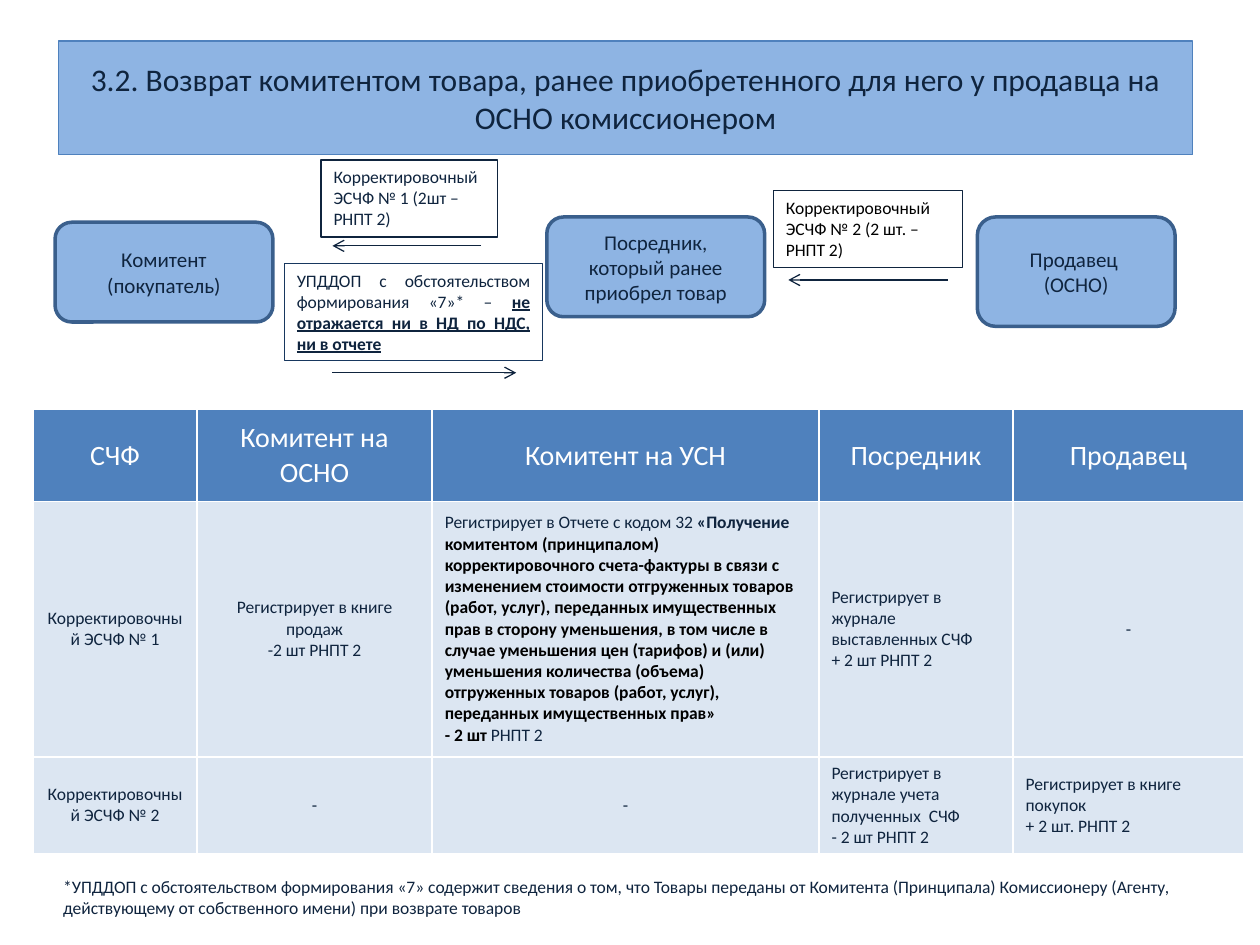
from pptx import Presentation
from pptx.dml.color import RGBColor
from pptx.enum.shapes import MSO_CONNECTOR as Link, MSO_SHAPE as Kind
from pptx.enum.text import MSO_ANCHOR as Anchor, MSO_AUTO_SIZE as Fit, PP_ALIGN as Align
from pptx.oxml.ns import qn
from pptx.util import Pt
from lxml.etree import SubElement

HUES = {
    "ink": "0F243E", "black": "000000", "white": "FFFFFF", "sky": "8EB4E3",
    "blue": "4F81BD", "edge": "3A5F8C", "navy": "17375E", "pale": "DCE6F2",
}
FONT = "Calibri"


def hue(name):
    return RGBColor.from_string(HUES[name])


def write(frame, paras, size, ink="ink", align=Align.LEFT):
    frame.word_wrap = True
    for i, parts in enumerate(paras):
        para = frame.add_paragraph() if i else frame.paragraphs[0]
        para.alignment = align
        for part in [parts] if isinstance(parts, str) else parts:
            text, marks, tone = (part, "", ink) if isinstance(part, str) else part
            run = para.add_run()
            run.text = text
            font = run.font
            font.name, font.size = FONT, Pt(size)
            font.bold, font.underline = "b" in marks, "u" in marks
            font.color.rgb = hue(tone)


def paint(shape, fill, line, width):
    if fill:
        shape.fill.solid()
        shape.fill.fore_color.rgb = hue(fill)
    else:
        shape.fill.background()
    shape.line.color.rgb = hue(line)
    shape.line.width = Pt(width)


def place(shape, box):
    shape.left, shape.top, shape.width, shape.height = map(Pt, box)


def add_title(slide, box, text):
    title = slide.shapes.title
    place(title, box)
    paint(title, "sky", "blue", 0.75)
    title.text_frame.vertical_anchor = Anchor.MIDDLE
    write(title.text_frame, [text], 18, align=Align.CENTER)


def add_party(slide, box, paras):
    shape = slide.shapes.add_shape(Kind.ROUNDED_RECTANGLE, *map(Pt, box))
    shape.shadow.inherit = False
    paint(shape, "sky", "edge", 2)
    shape.text_frame.vertical_anchor = Anchor.MIDDLE
    write(shape.text_frame, paras, 12, align=Align.CENTER)


def add_note(slide, box, parts, line=None, ink="ink", align=Align.LEFT):
    note = slide.shapes.add_textbox(*map(Pt, box))
    if line:
        paint(note, None, line, 0.75)
    write(note.text_frame, [parts], 10, ink, align)
    note.text_frame.auto_size = Fit.SHAPE_TO_FIT_TEXT


def add_arrow(slide, start, end, y):
    arrow = slide.shapes.add_connector(Link.STRAIGHT, Pt(start), Pt(y), Pt(end), Pt(y))
    arrow.line.color.rgb = hue("ink")
    arrow.line.width = Pt(0.75)
    props = arrow._element.spPr
    SubElement(props.get_or_add_ln(), qn("a:tailEnd"), type="arrow")
    SubElement(props, qn("a:effectLst"))


def add_flow(slide, x, y):
    parties = [
        ((0, 35.5, 124.5, 57), ["Комитент (покупатель)"]),
        ((281, 32.5, 124.5, 57), ["Посредник, который ранее приобрел товар"]),
        ((527, 32.5, 113, 62.5), ["Продавец ", "(ОСНО)"]),
    ]
    for (left, top, wide, high), paras in parties:
        add_party(slide, (x + left, y + top, wide, high), paras)

    notes = [
        ((152, 0, 101, 44), "Корректировочный ЭСЧФ № 1 (2шт – РНПТ 2)",
         "ink", "ink", Align.LEFT),
        ((410.5, 17.5, 108, 44), "Корректировочный ЭСЧФ № 2 (2 шт. –РНПТ 2)",
         "ink", "black", Align.LEFT),
        ((131, 59, 147.5, 55.5),
         ["УПДДОП с обстоятельством формирования «7»* – ",
          ("не отражается ни в НД по НДС, ни в отчете", "bu", "ink")],
         "navy", "ink", Align.JUSTIFY),
    ]
    for (left, top, wide, high), parts, line, ink, align in notes:
        add_note(slide, (x + left, y + top, wide, high), parts, line, ink, align)

    for start, end, drop in [(243.5, 158.5, 49), (510, 419, 68.5), (158.5, 263.5, 121.5)]:
        add_arrow(slide, x + start, x + end, y + drop)


def add_grid(slide, box, widths, heights, rows):
    grid = slide.shapes.add_table(len(rows), len(widths), *map(Pt, box)).table
    grid.horz_banding = False
    for col, wide in zip(grid.columns, widths):
        col.width = Pt(wide)
    for row, high in zip(grid.rows, heights):
        row.height = Pt(high)
    for r, row in enumerate(rows):
        size, ink, fill = (10, "ink", "pale") if r else (16, "white", "blue")
        for c, (align, *paras) in enumerate(row):
            cell = grid.cell(r, c)
            cell.fill.solid()
            cell.fill.fore_color.rgb = hue(fill)
            cell.vertical_anchor = Anchor.MIDDLE
            write(cell.text_frame, paras, size, ink, align)


def main():
    deck = Presentation()
    deck.slide_width, deck.slide_height = Pt(720), Pt(540)
    slide = deck.slides.add_slide(deck.slide_layouts[5])
    add_title(slide, (33.5, 23.5, 648, 65),
              "3.2. Возврат комитентом товара, ранее приобретенного для него "
              "у продавца на ОСНО комиссионером")
    add_flow(slide, 31.5, 91.5)

    mid, left = Align.CENTER, Align.LEFT
    heads = ["СЧФ", "Комитент на ОСНО", "Комитент на УСН", "Посредник", "Продавец"]
    code = [
        "Регистрирует в Отчете с кодом 32 ",
        ("«Получение ", "b", "ink"),
        ("комитентом (принципалом) корректировочного счета-фактуры в связи с "
         "изменением стоимости отгруженных товаров (работ, услуг), переданных "
         "имущественных прав в сторону уменьшения, в том числе в случае "
         "уменьшения цен (тарифов) и (или) уменьшения количества (объема) "
         "отгруженных товаров (работ, услуг), переданных имущественных прав»",
         "b", "black"),
    ]
    rows = [
        [(mid, head) for head in heads],
        [(mid, "Корректировочный ЭСЧФ № 1"),
         (mid, "Регистрирует в книге продаж", "-2 шт РНПТ 2"),
         (left, code, [("- 2 шт ", "b", "black"), "РНПТ 2"]),
         (left, "Регистрирует в журнале выставленных СЧФ", "+ 2 шт РНПТ 2"),
         (mid, "-")],
        [(mid, "Корректировочный ЭСЧФ № 2"),
         (mid, "-"),
         (mid, "-"),
         (left, "Регистрирует в журнале учета полученных  СЧФ", "- 2 шт РНПТ 2"),
         (left, "Регистрирует в книге покупок", "+ 2 шт. РНПТ 2")],
    ]
    add_grid(slide, (19, 234, 692, 254), [93.5, 134.5, 221, 111, 132],
             [52.5, 146, 55.5], rows)
    add_note(slide, (29, 497, 671, 31.5),
             "*УПДДОП с обстоятельством формирования «7» содержит сведения о том, "
             "что Товары переданы от Комитента (Принципала) Комиссионеру (Агенту, "
             "действующему от собственного имени) при возврате товаров")
    deck.save("out.pptx")


if __name__ == "__main__":
    main()
